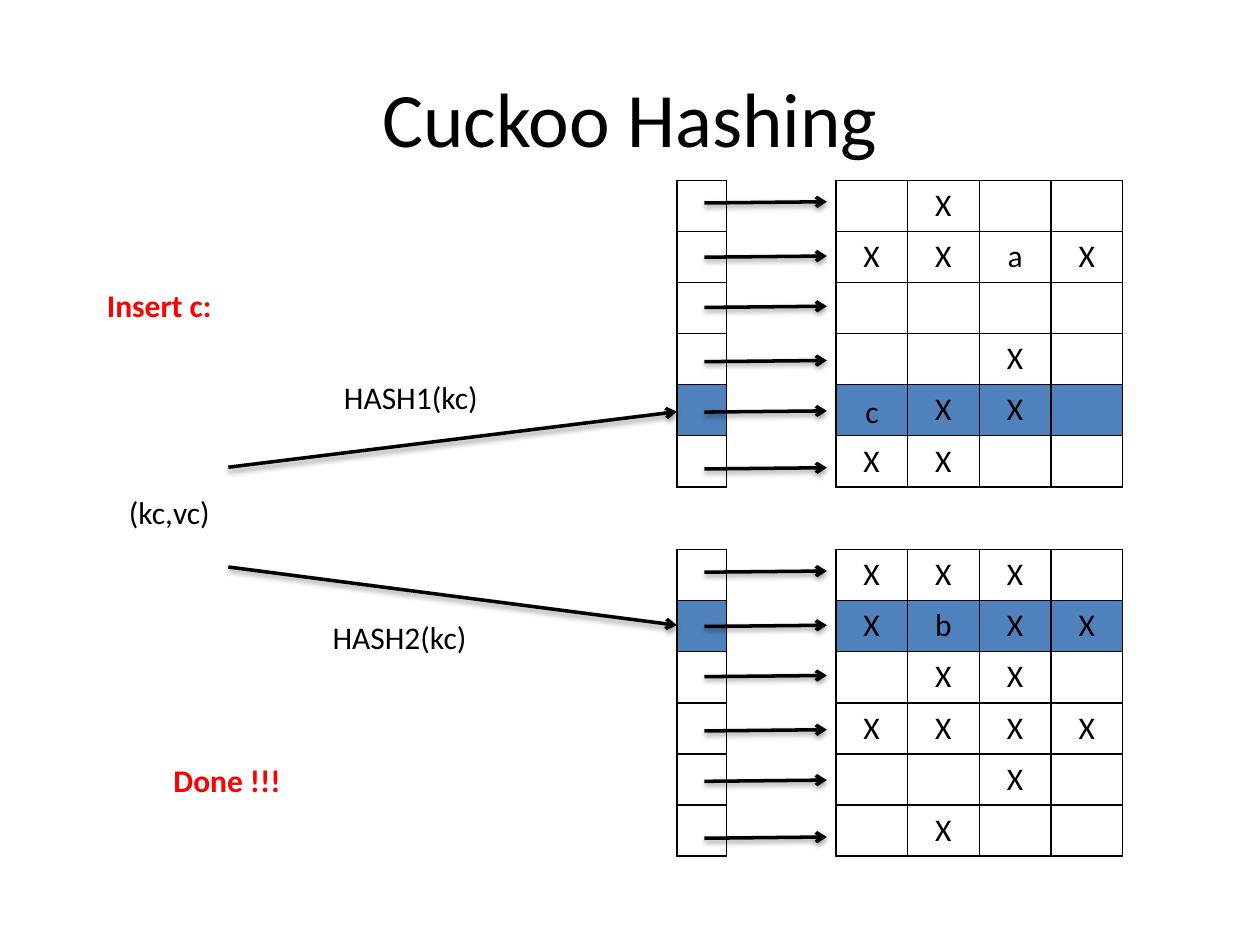
from lxml.etree import SubElement
from pptx import Presentation
from pptx.dml.color import RGBColor
from pptx.enum.shapes import MSO_CONNECTOR
from pptx.enum.text import MSO_ANCHOR, MSO_AUTO_SIZE, PP_ALIGN
from pptx.oxml import parse_xml
from pptx.oxml.ns import nsdecls, qn
from pptx.util import Pt

BLACK = RGBColor(0x00, 0x00, 0x00)
WHITE = RGBColor(0xFF, 0xFF, 0xFF)
RED = RGBColor(0xFF, 0x00, 0x00)
BLUE = RGBColor(0x4F, 0x81, 0xBD)

SHADOW = (
    f'<a:effectLst {nsdecls("a")}>'
    '<a:outerShdw blurRad="40000" dist="20000" dir="5400000" rotWithShape="0">'
    '<a:srgbClr val="000000"><a:alpha val="38000"/></a:srgbClr>'
    '</a:outerShdw></a:effectLst>'
)


class SlideWriter:
    font_name = "Calibri"
    body_size = 18
    title_size = 44

    def __init__(self, page):
        self.page = page

    def format_paragraph(self, para, size, color=BLACK, bold=False):
        para.font.name = self.font_name
        para.font.size = Pt(size)
        para.font.color.rgb = color
        para.font.bold = bold

    def title(self, text, left, top, width, height):
        box = self.page.shapes.title
        box.left, box.top, box.width, box.height = map(Pt, (left, top, width, height))
        frame = box.text_frame
        frame.text = text
        frame.vertical_anchor = MSO_ANCHOR.MIDDLE
        para = frame.paragraphs[0]
        para.alignment = PP_ALIGN.CENTER
        self.format_paragraph(para, self.title_size)

    def label(self, text, left, top, width, color=BLACK, bold=False):
        box = self.page.shapes.add_textbox(Pt(left), Pt(top), Pt(width), Pt(29))
        frame = box.text_frame
        frame.word_wrap = False
        frame.auto_size = MSO_AUTO_SIZE.SHAPE_TO_FIT_TEXT
        frame.text = text
        self.format_paragraph(frame.paragraphs[0], self.body_size, color, bold)

    def arrow(self, x1, y1, x2, y2):
        line = self.page.shapes.add_connector(
            MSO_CONNECTOR.STRAIGHT, Pt(x1), Pt(y1), Pt(x2), Pt(y2))
        line.line.color.rgb = BLACK
        line.line.width = Pt(2)
        SubElement(line.line._get_or_add_ln(), qn("a:tailEnd"), type="arrow")
        line._element.spPr.append(parse_xml(SHADOW))

    def table(self, rows, left, top, column_width, row_height, fills):
        """Draw one character per cell; fills maps a row index to its colour."""
        columns = len(rows[0])
        grid = self.page.shapes.add_table(
            len(rows), columns, Pt(left), Pt(top),
            Pt(column_width * columns), Pt(row_height * len(rows))).table
        grid.first_row = False
        grid.horz_banding = False
        for column in grid.columns:
            column.width = Pt(column_width)
        for index, row in enumerate(rows):
            grid.rows[index].height = Pt(row_height)
            for column, mark in enumerate(row):
                self.cell(grid.cell(index, column), mark.strip(), fills.get(index))

    def cell(self, cell, text, fill):
        cell.text = text
        para = cell.text_frame.paragraphs[0]
        para.alignment = PP_ALIGN.CENTER
        self.format_paragraph(para, self.body_size)
        # Borders come before the fill in the cell properties
        properties = cell._tc.get_or_add_tcPr()
        for side in ("lnL", "lnR", "lnT", "lnB"):
            border = SubElement(properties, qn(f"a:{side}"), w=str(Pt(1)))
            solid = SubElement(border, qn("a:solidFill"))
            SubElement(solid, qn("a:srgbClr"), val=str(BLACK))
        if fill is None:
            cell.fill.background()
        else:
            cell.fill.solid()
            cell.fill.fore_color.rgb = fill


# Each hash table: top, bucket rows, row fills
HASH_TABLES = [
    (103, [" X  ", "XXaX", "    ", "  X ", " XX ", "XX  "], {1: WHITE, 4: BLUE}),
    (314, ["XXX ", "XbXX", " XX ", "XXXX", "  X ", " X  "], {1: BLUE, 3: WHITE}),
]
ROW_HEIGHT = 29.2
INDEX_LEFT, INDEX_WIDTH = 386.8, 28.4
BUCKET_LEFT, BUCKET_WIDTH = 477.6, 41
ARROW_OFFSETS = [13, 44, 72.7, 103.7, 132.5, 165]


def main():
    deck = Presentation()
    deck.slide_width, deck.slide_height = Pt(720), Pt(540)
    page = deck.slides.add_slide(deck.slide_layouts[5])
    writer = SlideWriter(page)
    writer.title("Cuckoo Hashing", 36, 21.6, 648, 90)

    # Hash tables: index column, buckets and the arrows between them
    for top, buckets, fills in HASH_TABLES:
        index_fills = {row: fill for row, fill in fills.items() if fill == BLUE}
        writer.table([" "] * len(buckets), INDEX_LEFT, top, INDEX_WIDTH,
                     ROW_HEIGHT, index_fills)
        writer.table(buckets, BUCKET_LEFT, top, BUCKET_WIDTH, ROW_HEIGHT, fills)
        for offset in ARROW_OFFSETS:
            writer.arrow(402.5, top + offset, 472.5, top + offset - 0.7)

    # Key and its two hash functions
    writer.label("(kc,vc)", 66.5, 278, 62)
    writer.arrow(130.5, 267, INDEX_LEFT, 235.3)
    writer.arrow(130.5, 324, INDEX_LEFT, 357.3)
    writer.label("HASH1(kc)", 189.5, 212.5, 93.5)
    writer.label("HASH2(kc)", 183, 349.5, 93.5)

    # Inserted item and status
    writer.label("c", 487.5, 220.3, 22.5)
    writer.label("Insert c:", 54, 160, 76, RED, bold=True)
    writer.label("Done !!!", 92, 431.3, 76, RED, bold=True)

    deck.save("out.pptx")


if __name__ == "__main__":
    main()
